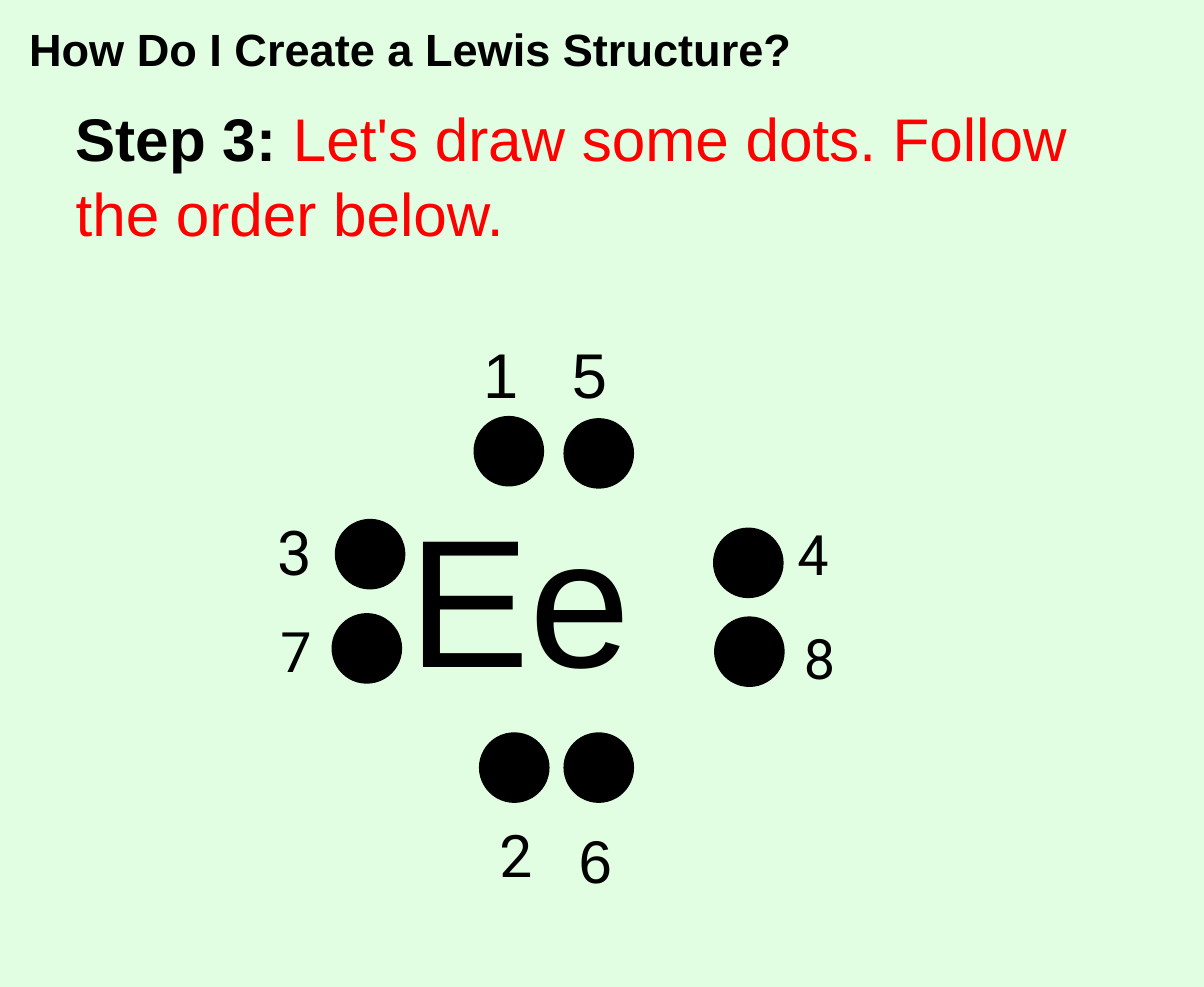
from pptx import Presentation
from pptx.dml.color import RGBColor as Rgb
from pptx.enum.shapes import MSO_SHAPE as Kind
from pptx.util import Emu, Pt

SCALE = 9144
PAGE = (1111, 911)
THEME = {
    "back": Rgb.from_string("E2FEE2"),
    "ink": Rgb.from_string("000000"),
    "red": Rgb.from_string("FF0000"),
    "title": 30,
    "step": 40,
    "atom": 121,
    "line": 3,
    "lead": 1.04,
    "drop": {"Arial": 0.05, "Roboto": 0.03},
}
DOT = 61
INSET = 5

TITLE = [("How Do I Create a Lewis Structure?", "ink", True)]
STEP = [("Step 3: ", "ink", True),
        ("Let's draw some dots. Follow the order below.", "red", False)]
ATOM = [("Ee", "ink", False)]

TEXTS = [
    (TITLE, (17, 11, 1072, 61), THEME["title"]),
    (STEP, (60, 83, 1001, 145), THEME["step"]),
    (ATOM, (367, 427, 288, 214), THEME["atom"]),
]

ORDER = [
    ("1", (439, 386), (436, 299), 42, "Arial"),
    ("2", (444, 678), (451, 747), 39, "Roboto"),
    ("3", (311, 481), (246, 465), 41, "Roboto"),
    ("4", (660, 489), (726, 471), 37, "Roboto"),
    ("5", (522, 388), (518, 299), 42, "Arial"),
    ("6", (522, 678), (524, 749), 40, "Arial"),
    ("7", (308, 568), (249, 560), 37, "Roboto"),
    ("8", (661, 571), (732, 567), 37, "Roboto"),
]


def px(*sizes):
    return [Emu(round(size * SCALE)) for size in sizes]


def write(slide, parts, box, size, face="Arial"):
    frame = slide.shapes.add_textbox(*px(*box)).text_frame
    frame.word_wrap = True
    drop = Pt(size * THEME["drop"][face])
    frame.margin_top = Emu(INSET * SCALE + drop)
    para = frame.paragraphs[0]
    para.line_spacing = THEME["lead"]
    para.font.size = Pt(size)
    para.font.name = face
    for words, tone, bold in parts:
        run = para.add_run()
        run.text = words
        run.font.bold = bold
        run.font.color.rgb = THEME[tone]


def draw_dot(slide, spot):
    dot = slide.shapes.add_shape(Kind.OVAL, *px(*spot, DOT, DOT))
    dot.shadow.inherit = False
    dot.fill.solid()
    dot.fill.fore_color.rgb = THEME["ink"]
    dot.line.color.rgb = THEME["ink"]
    dot.line.width = Pt(THEME["line"])


def main():
    deck = Presentation()
    deck.slide_width, deck.slide_height = px(*PAGE)
    slide = deck.slides.add_slide(deck.slide_layouts[6])
    slide.background.fill.solid()
    slide.background.fill.fore_color.rgb = THEME["back"]

    for parts, box, size in TEXTS:
        write(slide, parts, box, size)
    for digit, spot, place, size, face in ORDER:
        draw_dot(slide, spot)
        box = (*place, 1.4 * size, 1.93 * size)
        write(slide, [(digit, "ink", False)], box, size, face)

    deck.save("out.pptx")


if __name__ == "__main__":
    main()
